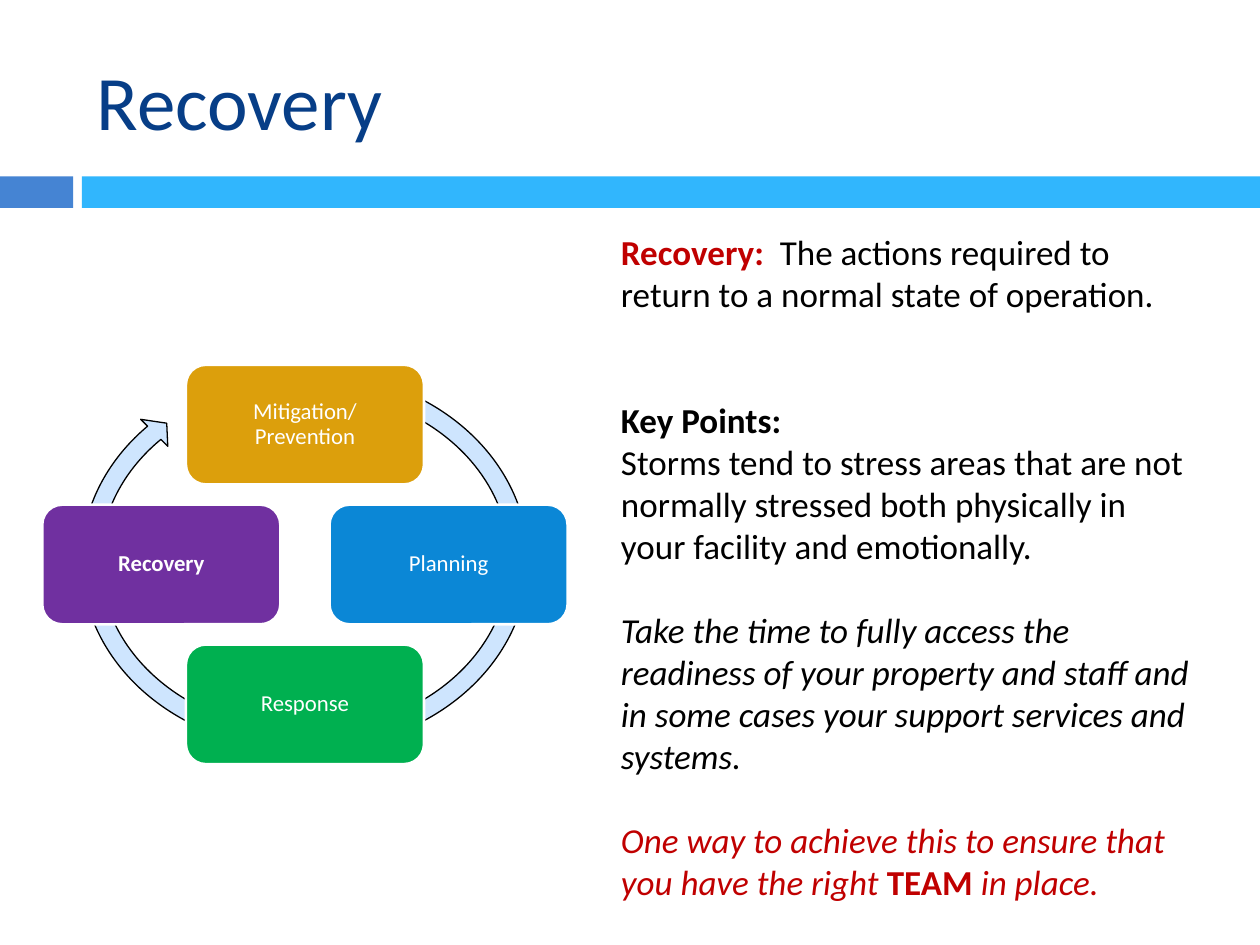
from pptx import Presentation
from pptx.dml.color import RGBColor
from pptx.enum.shapes import MSO_SHAPE as Shape
from pptx.enum.text import MSO_ANCHOR as Anchor, PP_ALIGN as Align
from pptx.util import Inches, Pt

FONT = "Calibri"
COLORS = {
    "title": "073E87", "accent": "4584D3", "band": "31B6FD", "ring": "CEE5FE",
    "gold": "DC9F0C", "blue": "0B87D6", "green": "00B050", "purple": "7030A0",
    "red": "C00000", "black": "000000", "white": "FFFFFF",
}

TITLE = "Recovery"
BANDS = [(0, 0.58, "accent"), (0.65, 9.35, "band")]  # left, width, color

# label, color, bold, horizontal and vertical step from the cycle centre
STAGES = [
    ("Mitigation/Prevention", "gold", False, 0, -1),
    ("Planning", "blue", False, 1, 0),
    ("Response", "green", False, 0, 1),
    ("Recovery", "purple", True, -1, 0),
]
CENTER_X, CENTER_Y = 2.42, 4.48
STEP_X, STEP_Y = 1.14, 1.11
STAGE_WIDTH, STAGE_HEIGHT = 1.89, 0.95
RING_ADJUSTMENTS = (0.047, 2.729, 132.188, 177.727, 0.048)

LINE = 24  # points taken by one line of body text
# lines of space before, runs of (text, color, style)
BODY = [
    (0, [("Recovery:  ", "red", "bold"),
         ("The actions required to return to a normal state of operation.", "black", "")]),
    (2, [("Key Points:", "black", "bold")]),
    (0, [("Storms tend to stress areas that are not normally stressed both "
          "physically in your facility and emotionally.", "black", "")]),
    (1, [("Take the time to fully access the readiness of your property and staff "
          "and in some cases your support services and systems.", "black", "italic")]),
    (1, [("One way to achieve this to ensure that you have the right ", "red", "italic"),
         ("TEAM", "red", "bold"),
         (" in place.", "red", "italic")]),
]


def rgb(name):
    return RGBColor.from_string(COLORS[name])


def add_run(paragraph, text, size, color, style=""):
    run = paragraph.add_run()
    run.text = text
    font = run.font
    font.name, font.size = FONT, Pt(size)
    font.bold, font.italic = style == "bold", style == "italic"
    font.color.rgb = rgb(color)


def add_shape(slide, kind, left, top, width, height, fill, line=None, line_width=0):
    shape = slide.shapes.add_shape(
        kind, Inches(left), Inches(top), Inches(width), Inches(height))
    shape.shadow.inherit = False
    shape.fill.solid()
    shape.fill.fore_color.rgb = rgb(fill)
    if line:
        shape.line.color.rgb = rgb(line)
        shape.line.width = Pt(line_width)
    else:
        shape.line.fill.background()
    return shape


def add_text_frame(slide, left, top, width, height):
    box = slide.shapes.add_textbox(
        Inches(left), Inches(top), Inches(width), Inches(height))
    box.text_frame.word_wrap = True
    return box.text_frame


def add_header(slide):
    for left, width, color in BANDS:
        add_shape(slide, Shape.RECTANGLE, left, 1.4, width, 0.25, color)
    frame = add_text_frame(slide, 0.67, 0.25, 8.92, 1.08)
    frame.vertical_anchor = Anchor.MIDDLE
    add_run(frame.paragraphs[0], TITLE, 44, "title")


def add_cycle(slide):
    ring = add_shape(slide, Shape.CIRCULAR_ARROW, 0.57, 2.87, 3.7, 3.16,
                     "ring", "black", 0.75)
    for index, value in enumerate(RING_ADJUSTMENTS):
        ring.adjustments[index] = value
    for label, color, bold, step_x, step_y in STAGES:
        left = CENTER_X + step_x * STEP_X - STAGE_WIDTH / 2
        top = CENTER_Y + step_y * STEP_Y - STAGE_HEIGHT / 2
        stage = add_shape(slide, Shape.ROUNDED_RECTANGLE, left, top,
                          STAGE_WIDTH, STAGE_HEIGHT, color, "white", 1.5)
        frame = stage.text_frame
        frame.word_wrap = True
        frame.vertical_anchor = Anchor.MIDDLE
        paragraph = frame.paragraphs[0]
        paragraph.alignment = Align.CENTER
        paragraph.line_spacing = 0.9
        add_run(paragraph, label, 13, "white", "bold" if bold else "")


def add_body(slide):
    frame = add_text_frame(slide, 4.83, 1.78, 4.75, 5.7)
    for index, (lines_before, runs) in enumerate(BODY):
        paragraph = frame.add_paragraph() if index else frame.paragraphs[0]
        paragraph.space_before = Pt(lines_before * LINE)
        for text, color, style in runs:
            add_run(paragraph, text, 20, color, style)


def main():
    presentation = Presentation()
    presentation.slide_width, presentation.slide_height = Inches(10), Inches(7.5)
    slide = presentation.slides.add_slide(presentation.slide_layouts[6])
    add_header(slide)
    add_cycle(slide)
    add_body(slide)
    presentation.save("out.pptx")


if __name__ == "__main__":
    main()
